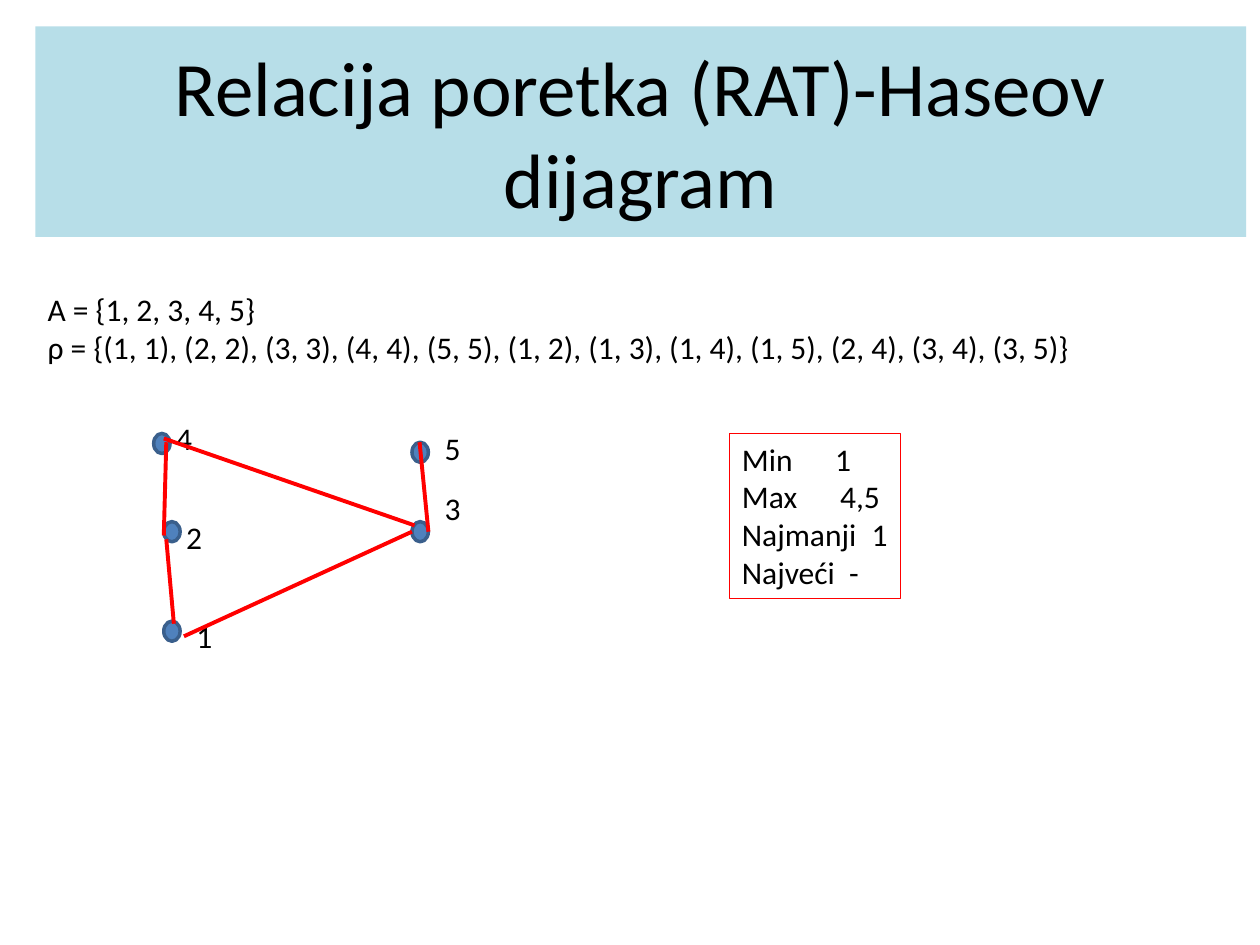
from typing import NamedTuple

from lxml import etree
from pptx import Presentation
from pptx.dml.color import RGBColor
from pptx.enum.shapes import MSO_CONNECTOR, MSO_SHAPE
from pptx.enum.text import MSO_ANCHOR, PP_ALIGN
from pptx.oxml.ns import qn
from pptx.util import Pt

RECT, OVAL = MSO_SHAPE.RECTANGLE, MSO_SHAPE.OVAL
LINE = MSO_CONNECTOR.STRAIGHT
LEFT, CENTER = PP_ALIGN.LEFT, PP_ALIGN.CENTER
TOP, MIDDLE = MSO_ANCHOR.TOP, MSO_ANCHOR.MIDDLE
SCALE = 9144
FONT = "Calibri"
BLACK, RED = "000000", "FF0000"
BLUE, NAVY, PALE = "4F81BD", "3A5F8C", "B7DEE8"


class Box(NamedTuple):
    x: int
    y: int
    w: int
    h: int


class Node(NamedTuple):
    name: str
    x: int
    y: int
    tag_x: int
    tag_y: int


class Edge(NamedTuple):
    x1: int
    y1: int
    x2: int
    y2: int


class Row(NamedTuple):
    name: str
    value: str
    stop: int


NODES = [
    Node("1", 130, 493, 146, 485),
    Node("2", 130, 414, 138, 406),
    Node("3", 327, 414, 343, 383),
    Node("4", 122, 344, 130, 328),
    Node("5", 327, 351, 343, 336),
]
EDGES = [
    Edge(138, 495, 132, 428),
    Edge(130, 425, 132, 351),
    Edge(146, 505, 327, 422),
    Edge(340, 422, 333, 351),
    Edge(329, 417, 130, 348),
]
ROWS = [
    Row("Min", "1", 74),
    Row("Max", "4,5", 78),
    Row("Najmanji", "1", 103),
    Row("Najveći", "-", 85),
]
SETS = [
    "A = {1, 2, 3, 4, 5}",
    "ρ = {(1, 1), (2, 2), (3, 3), (4, 4), (5, 5), (1, 2), (1, 3), "
    "(1, 4), (1, 5), (2, 4), (3, 4), (3, 5)}",
]


def px(n: int) -> int:
    return n * SCALE


def color(code: str) -> RGBColor:
    return RGBColor.from_string(code)


def add_shape(slide, kind, box: Box, fill="", line="", width=1.0):
    shape = slide.shapes.add_shape(kind, *map(px, box))
    shape.shadow.inherit = False
    if fill:
        shape.fill.solid()
        shape.fill.fore_color.rgb = color(fill)
    else:
        shape.fill.background()
    if line:
        shape.line.color.rgb = color(line)
        shape.line.width = Pt(width)
    else:
        shape.line.fill.background()
    return shape


def add_text(shape, lines: list[str], *, size=18, align=LEFT, anchor=TOP, wrap=False):
    frame = shape.text_frame
    frame.word_wrap = wrap
    frame.vertical_anchor = anchor
    for i, text in enumerate(lines):
        para = frame.paragraphs[0] if i == 0 else frame.add_paragraph()
        para.alignment = align
        run = para.add_run()
        run.text = text
        run.font.name = FONT
        run.font.size = Pt(size)
        run.font.color.rgb = color(BLACK)


def add_label(slide, box: Box, lines: list[str]) -> None:
    add_text(slide.shapes.add_textbox(*map(px, box)), lines)


def add_node(slide, node: Node) -> None:
    add_shape(slide, OVAL, Box(node.x, node.y, 13, 16), BLUE, NAVY, 2)
    add_label(slide, Box(node.tag_x, node.tag_y, 33, 40), [node.name])


def add_edge(slide, edge: Edge) -> None:
    line = slide.shapes.add_connector(LINE, *map(px, edge))
    line.line.color.rgb = color(RED)
    line.line.width = Pt(2.25)
    etree.SubElement(line._element.spPr, qn("a:effectLst"))


def add_rows(slide, box: Box, rows: list[Row]) -> None:
    shape = add_shape(slide, RECT, box, line=RED, width=0.75)
    add_text(shape, [f"{row.name}\t{row.value}" for row in rows])
    for para, row in zip(shape.text_frame.paragraphs, rows):
        tabs = etree.SubElement(para._p.get_or_add_pPr(), qn("a:tabLst"))
        etree.SubElement(tabs, qn("a:tab"), pos=str(px(row.stop)), algn="l")


def main() -> None:
    deck = Presentation()
    deck.slide_width, deck.slide_height = px(1000), px(750)
    slide = deck.slides.add_slide(deck.slide_layouts[6])
    title = add_shape(slide, RECT, Box(28, 21, 961, 167), PALE)
    add_text(title, ["Relacija poretka (RAT)-Haseov dijagram"],
             size=44, align=CENTER, anchor=MIDDLE, wrap=True)
    add_label(slide, Box(28, 225, 850, 525), SETS)
    for node in NODES:
        add_node(slide, node)
    add_rows(slide, Box(579, 344, 136, 131), ROWS)
    for edge in EDGES:
        add_edge(slide, edge)
    deck.save("out.pptx")


if __name__ == "__main__":
    main()
